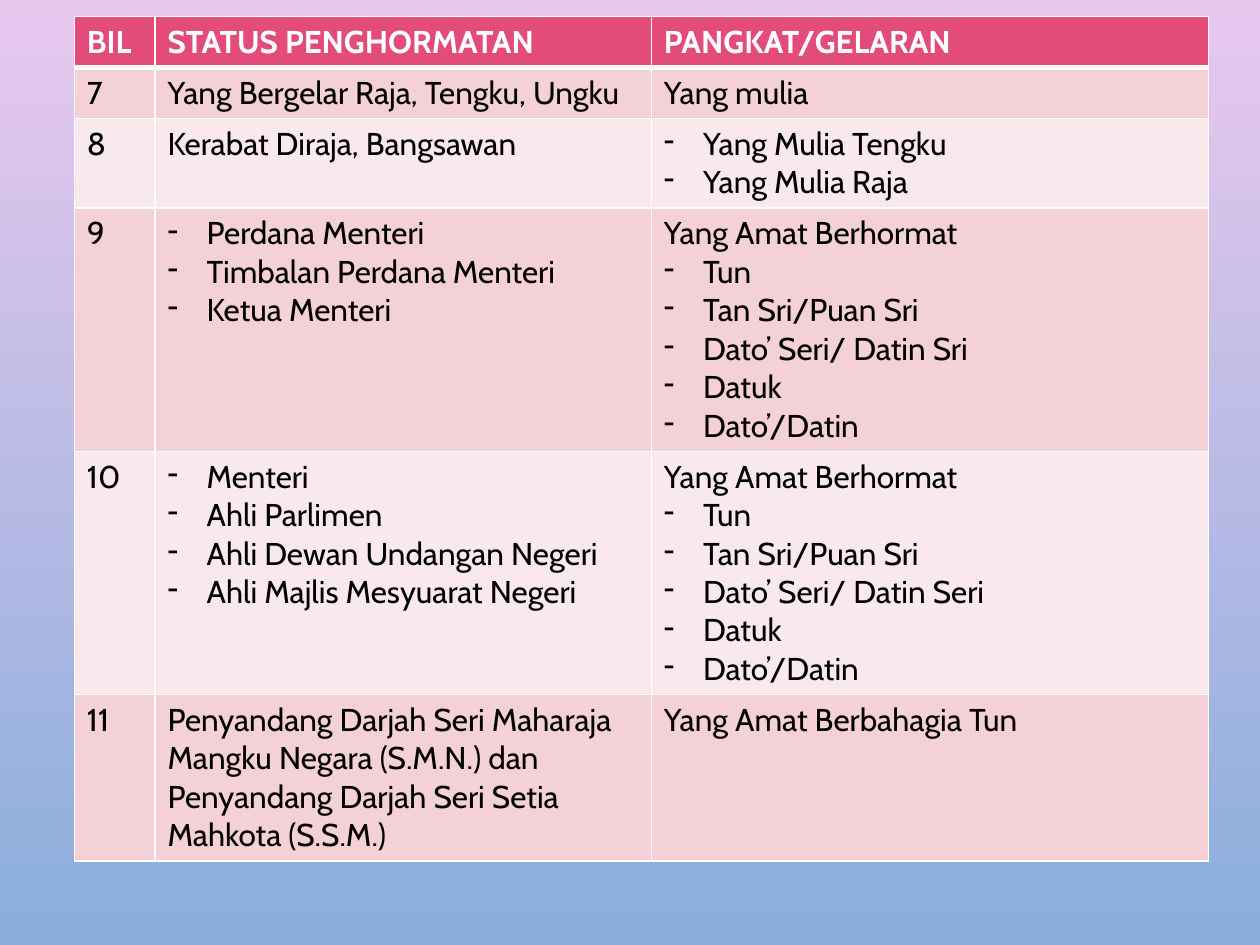
import pptx
import pptx.util
import pptx.dml.color
import pptx.oxml.ns
import lxml.etree

Inches = pptx.util.Inches
Pt = pptx.util.Pt

COLORS = {
    "top": "E9C8EF",
    "base": "89AEDB",
    "head": "E34B7A",
    "odd": "F4D0D7",
    "even": "FAE9EC",
    "white": "FFFFFF",
    "black": "000000",
}
FONT = "Cabin"
DASH = "- "
WIDTHS = [0.64, 3.94, 4.42]
ROWS = [
    (1, ["BIL"], ["STATUS PENGHORMATAN"], ["PANGKAT/GELARAN"]),
    (1, ["7"], ["Yang Bergelar Raja, Tengku, Ungku"], ["Yang mulia"]),
    (2, ["8"], ["Kerabat Diraja, Bangsawan"],
     ["- Yang Mulia Tengku", "- Yang Mulia Raja"]),
    (6, ["9"],
     ["- Perdana Menteri", "- Timbalan Perdana Menteri", "- Ketua Menteri"],
     ["Yang Amat Berhormat", "- Tun", "- Tan Sri/Puan Sri",
      "- Dato’ Seri/ Datin Sri", "- Datuk", "- Dato’/Datin"]),
    (6, ["10"],
     ["- Menteri", "- Ahli Parlimen", "- Ahli Dewan Undangan Negeri",
      "- Ahli Majlis Mesyuarat Negeri"],
     ["Yang Amat Berhormat", "- Tun", "- Tan Sri/Puan Sri",
      "- Dato’ Seri/ Datin Seri", "- Datuk", "- Dato’/Datin"]),
    (4, ["11"],
     ["Penyandang Darjah Seri Maharaja Mangku Negara (S.M.N.) dan "
      "Penyandang Darjah Seri Setia Mahkota (S.S.M.)"],
     ["Yang Amat Berbahagia Tun"]),
]


def rgb(name):
    return pptx.dml.color.RGBColor.from_string(COLORS[name])


def add_tag(parent, tag, **attrs):
    return lxml.etree.SubElement(parent, pptx.oxml.ns.qn(tag), **attrs)


def add_edges(cell, row):
    props = cell._tc.get_or_add_tcPr()
    for side in "LRTB":
        thick = (row, side) in ((0, "B"), (1, "T"))
        line = add_tag(props, "a:ln" + side, w=str(Pt(3 if thick else 1)))
        fill = add_tag(line, "a:solidFill")
        add_tag(fill, "a:srgbClr", val=COLORS["white"])


def add_dash(para):
    props = para._p.get_or_add_pPr()
    props.set("marL", str(Inches(0.31)))
    props.set("indent", str(Inches(-0.31)))
    add_tag(props, "a:buChar", char="-")


def fill_cell(cell, row, lines):
    add_edges(cell, row)
    cell.fill.solid()
    shade = "odd" if row % 2 else "even"
    cell.fill.fore_color.rgb = rgb(shade if row else "head")
    frame = cell.text_frame
    for i, line in enumerate(lines):
        para = frame.add_paragraph() if i else frame.paragraphs[0]
        if line.startswith(DASH):
            add_dash(para)
        run = para.add_run()
        run.text = line.removeprefix(DASH)
        run.font.name = FONT
        run.font.size = Pt(18)
        run.font.bold = row == 0
        run.font.color.rgb = rgb("black" if row else "white")


def main():
    deck = pptx.Presentation()
    deck.slide_width, deck.slide_height = Inches(10), Inches(7.5)
    slide = deck.slides.add_slide(deck.slide_layouts[6])

    back = slide.background.fill
    back.gradient()
    back.gradient_angle = 270
    for stop, name, place in zip(back.gradient_stops, ("top", "base"), (0, 1)):
        stop.color.rgb = rgb(name)
        stop.position = place

    heights = [0.1 + 0.305 * row[0] for row in ROWS]
    table = slide.shapes.add_table(
        len(ROWS), len(WIDTHS), Inches(0.59), Inches(0.13),
        Inches(sum(WIDTHS)), Inches(sum(heights))).table
    for col, width in zip(table.columns, WIDTHS):
        col.width = Inches(width)
    for r, (count, *cells) in enumerate(ROWS):
        table.rows[r].height = Inches(heights[r])
        for c, lines in enumerate(cells):
            fill_cell(table.cell(r, c), r, lines)

    deck.save("out.pptx")


if __name__ == "__main__":
    main()
